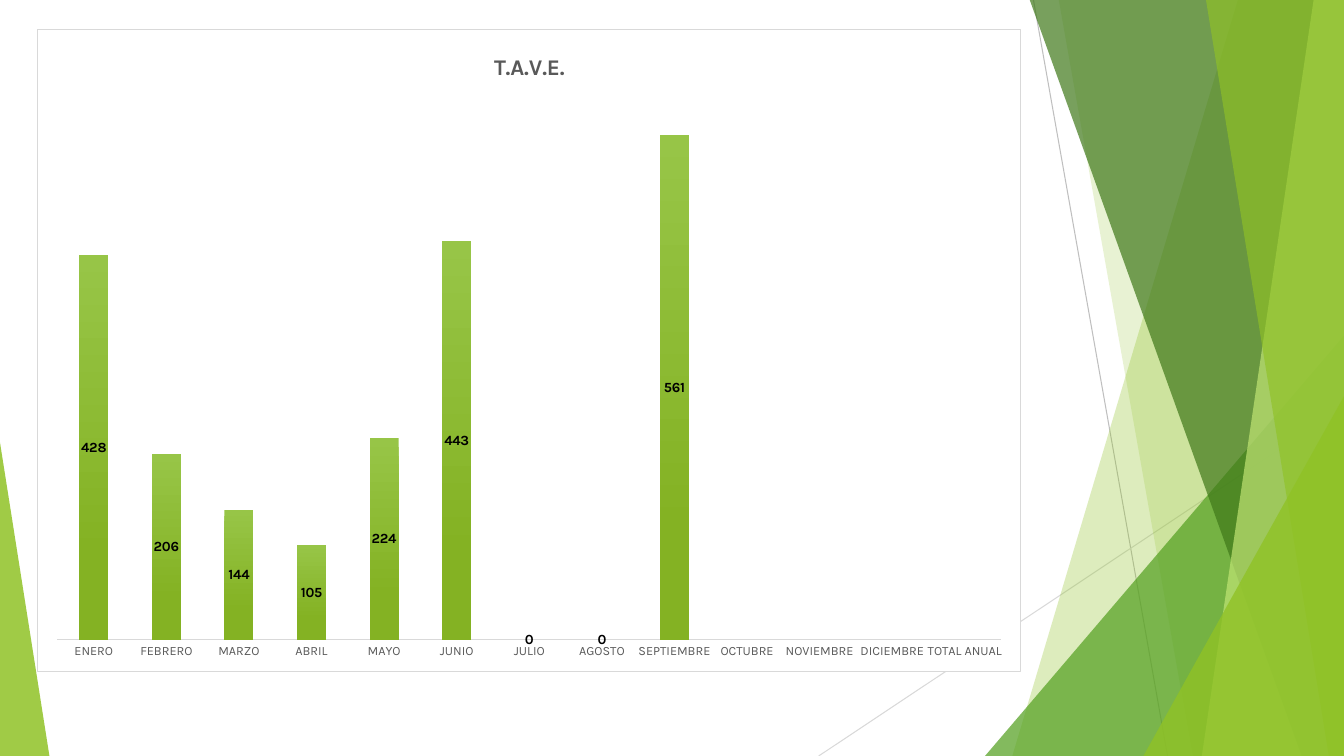
from lxml import etree
from pptx import Presentation
from pptx.chart.data import CategoryChartData
from pptx.dml.color import RGBColor
from pptx.enum.chart import XL_CHART_TYPE, XL_LABEL_POSITION, XL_TICK_LABEL_POSITION, XL_TICK_MARK
from pptx.enum.shapes import MSO_CONNECTOR, MSO_SHAPE
from pptx.oxml import parse_xml
from pptx.oxml.ns import nsdecls, qn
from pptx.util import Inches, Pt

STACKED = XL_CHART_TYPE.COLUMN_STACKED
CENTER = XL_LABEL_POSITION.CENTER
NEXT_TO_AXIS = XL_TICK_LABEL_POSITION.NEXT_TO_AXIS
NO_TICK = XL_TICK_MARK.NONE
STRAIGHT = MSO_CONNECTOR.STRAIGHT
TRIANGLE = MSO_SHAPE.ISOSCELES_TRIANGLE

LIME = RGBColor(0x90, 0xC2, 0x26)
PALE_LIME = RGBColor(0xC0, 0xE4, 0x74)
GREEN = RGBColor(0x54, 0xA0, 0x21)
DARK_GREEN = RGBColor(0x3F, 0x78, 0x19)
BAR_TOP = RGBColor(0x97, 0xC5, 0x47)
BAR_BOTTOM = RGBColor(0x84, 0xB2, 0x23)
BLACK = RGBColor(0, 0, 0)
TEXT_GRAY = RGBColor(0x59, 0x59, 0x59)
LINE_GRAY = RGBColor(0xBF, 0xBF, 0xBF)
LIGHT_GRAY = RGBColor(0xD9, 0xD9, 0xD9)

FONT = "Karla"
WIDTH, HEIGHT = 13.33, 7.5
BAND_TOP = -0.01

MONTHS = ["ENERO", "FEBRERO", "MARZO", "ABRIL", "MAYO", "JUNIO", "JULIO", "AGOSTO",
          "SEPTIEMBRE", "OCTUBRE", "NOVIEMBRE", "DICIEMBRE", "TOTAL ANUAL"]
COUNTS = [428, 206, 144, 105, 224, 443, 0, 0, 561, None, None, None, None]


def apply_format(target, values):
    for name, value in values.items():
        setattr(target, name, value)


def style_facet(facet, color, opacity):
    """Flat translucent fill without outline or shadow."""
    facet.shadow.inherit = False
    facet.line.fill.background()
    facet.fill.solid()
    facet.fill.fore_color.rgb = color
    tint = facet.fill._xPr.find(qn("a:solidFill"))[0]
    etree.SubElement(tint, qn("a:alpha"), val=str(opacity * 1000))


def add_ray(slide, start, end, color):
    ray = slide.shapes.add_connector(STRAIGHT, *map(Inches, start + end))
    ray.line.color.rgb = color
    ray.line.width = Pt(0.75)
    etree.SubElement(ray._element.spPr, qn("a:effectLst"))


def add_band(slide, box, top_left, bottom_left, color, opacity):
    """Slanted band whose right side follows the right edge of the box."""
    left, top, width, height = box
    right, bottom = left + width, top + height
    outline = [(left + top_left, top), (right, top), (right, bottom), (left + bottom_left, bottom)]
    points = [(Inches(x), Inches(y)) for x, y in outline]
    builder = slide.shapes.build_freeform(*points[0])
    builder.add_line_segments(points[1:], close=True)
    style_facet(builder.convert_to_shape(), color, opacity)


def add_corner(slide, box, apex, color, opacity):
    corner = slide.shapes.add_shape(TRIANGLE, *map(Inches, box))
    corner.adjustments[0] = apex
    style_facet(corner, color, opacity)


def add_facets(slide, box):
    """Decorative rays, bands and corners, back to front."""
    left, top, width, height = box
    right, bottom = left + width, top + height
    add_ray(slide, (10.25, top), (11.58, bottom), LINE_GRAY)
    add_ray(slide, (right, 4.03), (8.12, bottom), LIGHT_GRAY)

    def band(band_left, *style):
        add_band(slide, (band_left, BAND_TOP, right - band_left, bottom - BAND_TOP), *style)

    def right_corner(corner_width, corner_height, *style):
        corner_box = (right - corner_width, bottom - corner_height, corner_width, corner_height)
        add_corner(slide, corner_box, 1, *style)

    band(10.04, 2.24, 0, LIME, 30)
    band(10.5, 0, 1.33, LIME, 20)
    right_corner(3.56, 4.17, GREEN, 72)
    band(10.21, 0, 2.7, DARK_GREEN, 70)
    band(11.92, 1.11, 0, PALE_LIME, 70)
    band(11.96, 0, 1.22, LIME, 65)
    right_corner(1.99, 3.57, LIME, 80)
    add_corner(slide, (left, bottom - 3.11, 0.49, 3.11), 0, LIME, 85)


def set_layout(parent, index, target="", **fractions):
    """Place a chart part by fractions of the chart area."""
    for old in parent.findall(qn("c:layout")):
        parent.remove(old)
    modes = "".join(f'<c:{key}Mode val="edge"/>' for key in "xy")
    sizes = "".join(f'<c:{key} val="{value}"/>' for key, value in fractions.items())
    parent.insert(index, parse_xml(
        f'<c:layout {nsdecls("c")}><c:manualLayout>{target}{modes}{sizes}'
        '</c:manualLayout></c:layout>'))


def add_monthly_chart(slide, box):
    data = CategoryChartData()
    data.categories = MONTHS
    data.add_series("Series 1", COUNTS)
    chart = slide.shapes.add_chart(STACKED, *map(Inches, box), data).chart
    chart.has_legend = False
    apply_format(chart.font, {"name": FONT, "size": Pt(10)})
    chart.font.color.rgb = BLACK

    # Title
    chart.has_title = True
    title_frame = chart.chart_title.text_frame
    title_frame.text = "T.A.V.E."
    title_font = title_frame.paragraphs[0].runs[0].font
    apply_format(title_font, {"name": FONT, "size": Pt(16), "bold": True})
    title_font.color.rgb = TEXT_GRAY
    chart.chart_title.include_in_layout = False
    set_layout(chart.chart_title._element, 1, x=0.46, y=0.03)

    # Axes
    months = chart.category_axis
    apply_format(months, {"major_tick_mark": NO_TICK, "minor_tick_mark": NO_TICK,
                          "tick_label_position": NEXT_TO_AXIS, "has_major_gridlines": False})
    apply_format(months.tick_labels.font, {"name": FONT, "size": Pt(9)})
    months.tick_labels.font.color.rgb = TEXT_GRAY
    months.format.line.color.rgb = LIGHT_GRAY
    months.format.line.width = Pt(1)
    apply_format(chart.value_axis, {"visible": False, "has_major_gridlines": False,
                                    "minimum_scale": 0, "maximum_scale": 600})

    # Columns
    plot = chart.plots[0]
    apply_format(plot, {"gap_width": 150, "overlap": 100, "vary_by_categories": False})
    columns = plot.series[0]
    fill = columns.format.fill
    fill.gradient()
    fill.gradient_angle = 270
    for stop, color, position in zip(fill.gradient_stops, (BAR_TOP, BAR_BOTTOM), (0, 0.78)):
        stop.color.rgb = color
        stop.position = position
    labels = columns.data_labels
    apply_format(labels, {"show_value": True, "position": CENTER})
    apply_format(labels.font, {"name": FONT, "size": Pt(10), "bold": True})
    labels.font.color.rgb = BLACK

    # Plot area and chart frame
    chart_xml = chart._chartSpace.find(qn("c:chart"))
    set_layout(chart_xml.find(qn("c:plotArea")), 0, '<c:layoutTarget val="inner"/>',
               x=0.02, y=0.11, w=0.96, h=0.84)
    chart_xml.addnext(parse_xml(
        f'<c:spPr {nsdecls("c", "a")}><a:solidFill><a:srgbClr val="FFFFFF"/></a:solidFill>'
        f'<a:ln w="{Pt(0.75)}"><a:solidFill><a:srgbClr val="{LIGHT_GRAY}"/></a:solidFill></a:ln>'
        '</c:spPr>'))


def main():
    deck = Presentation()
    deck.slide_width, deck.slide_height = Inches(WIDTH), Inches(HEIGHT)
    slide = deck.slides.add_slide(deck.slide_layouts[6])
    add_facets(slide, (0, 0, WIDTH, HEIGHT))
    add_monthly_chart(slide, (0.37, 0.29, 9.76, 6.38))
    deck.save("out.pptx")


if __name__ == "__main__":
    main()
